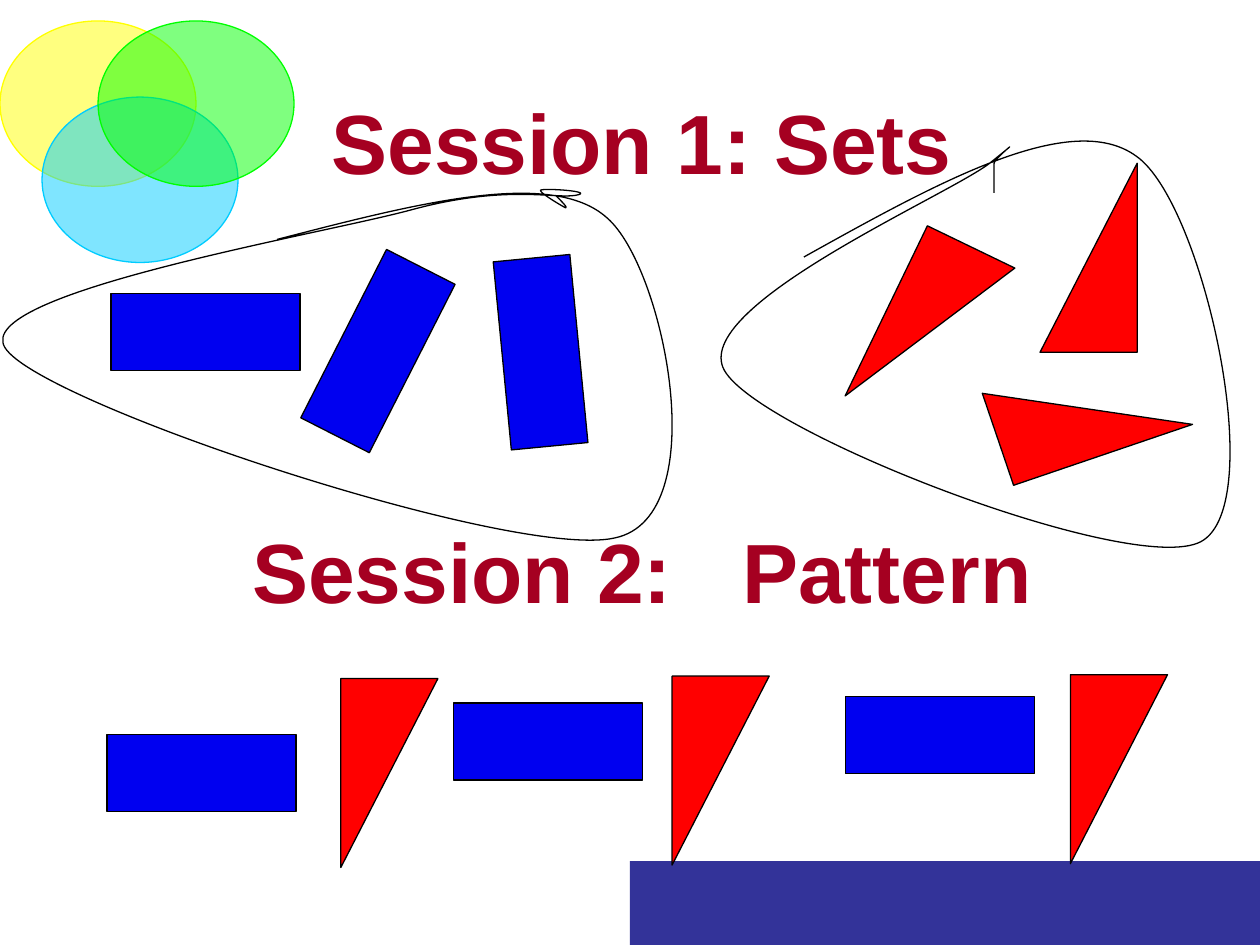
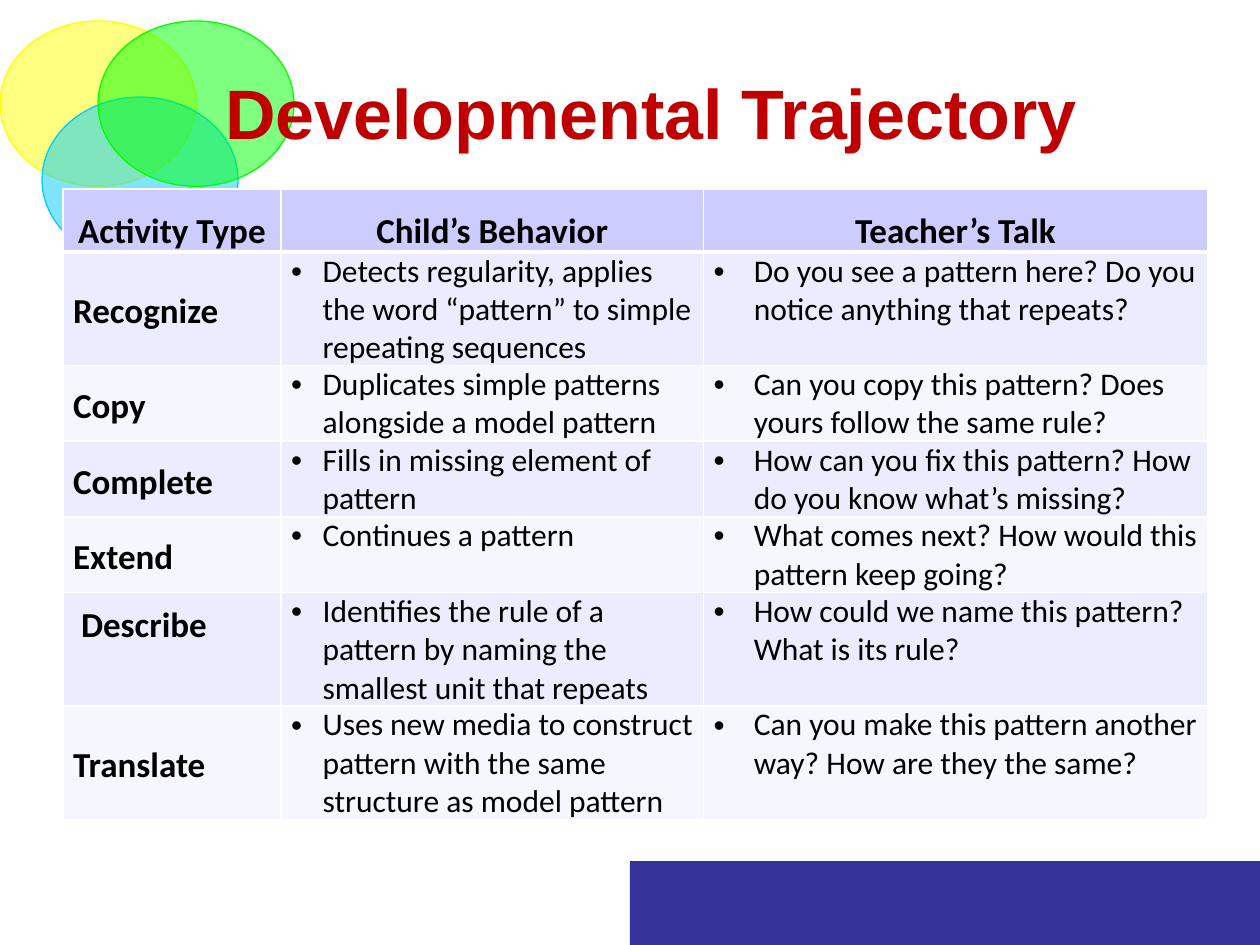
import pptx
import pptx.dml.color
import pptx.enum.shapes
import pptx.enum.text
import pptx.oxml
import pptx.oxml.ns
import pptx.util

Pt = pptx.util.Pt
SHAPE = pptx.enum.shapes.MSO_SHAPE
ALIGN = pptx.enum.text.PP_ALIGN
ANCHOR = pptx.enum.text.MSO_ANCHOR
NS = pptx.oxml.ns.nsdecls("a")
qn = pptx.oxml.ns.qn

HUES = {
    "black": "000000", "white": "FFFFFF", "band": "333399",
    "yellow": "FFFF00", "cyan": "00CCFF", "green": "00FF00",
    "crimson": "A50021", "red": "C00000",
    "block": "0000F0", "wedge": "FF0000",
    "head": "CCCCFF", "odd": "ECECFF", "even": "F6F6FF",
}

BIG = {"name": "Arial", "size": Pt(48), "bold": True}
TITLE = {**BIG, "size": Pt(40)}
LABEL = {"name": "Calibri", "size": Pt(20), "bold": True}
BODY = {**LABEL, "size": Pt(18), "bold": False}
INSET = {"margin_left": Pt(5.8), "margin_right": Pt(5.8),
         "margin_top": 0, "margin_bottom": 0}

# Left, top, turn in degrees
BLOCKS = [(254.9, 179.3, 84.5), (259.2, 401.8, 0), (483.1, 398.2, 0),
          (63.4, 167.8, 0), (162, 178.6, 297), (61.2, 419.8, 0)]
WEDGES = [(168.5, 414, 90), (567.4, 205.9, 341.2), (568.1, 119.5, 270),
          (477.4, 162, 115.8), (357.8, 412.6, 90), (585.4, 411.8, 90)]

# Start point, then two handles and an end point for each curve
BLOCK_BOX = (1.4, 108.7, 383, 200.9)
BLOCK_LOOP = [
    (158.4, 136.8),
    (236.9, 116.6), (315.4, 95.8), (347, 124.6),
    (379.4, 152.6), (409, 295.2), (351.4, 307.4),
    (293.8, 320.4), (22.3, 230.4), (2.9, 198.7),
    (-16.6, 167.8), (180, 134.6), (234, 120.2),
    (288.7, 105.1), (316.8, 113.8), (329, 111.6),
    (341.3, 109.4), (310.3, 107.3), (308.9, 108.7),
    (308.2, 110.2), (321.8, 118.1), (323.3, 118.8),
    (324.7, 118.8), (321.1, 115.2), (317.5, 111.6),
]
WEDGE_BOX = (411.8, 80.6, 290.9, 231.8)
WEDGE_LOOP = [
    (459.4, 146.9),
    (535.7, 104.4), (612, 61.9), (649.4, 89.3),
    (687.6, 115.9), (725.8, 288.7), (686.2, 309.6),
    (647.3, 329.8), (434.2, 247.7), (414, 211.7),
    (393.8, 175.7), (539.3, 113), (565.2, 93.6),
    (590.4, 73.4), (567.4, 90.7), (568.1, 93.6),
    (568.1, 95.8), (568.1, 103), (568.1, 110.2),
]

HEADS = ["Activity Type", "Child’s Behavior", "Teacher’s Talk"]
STAGES = [
    ("Recognize",
     "Detects regularity, applies the word “pattern” to simple repeating sequences",
     "Do you see a pattern here? Do you notice anything that repeats?"),
    ("Copy",
     "Duplicates simple patterns alongside a model pattern",
     "Can you copy this pattern? Does yours follow the same rule?"),
    ("Complete",
     "Fills in missing element of pattern",
     "How can you fix this pattern? How do you know what’s missing?"),
    ("Extend",
     "Continues a pattern",
     "What comes next? How would this pattern keep going?"),
    ("Describe",
     "Identifies the rule of a pattern by naming the smallest unit that repeats",
     "How could we name this pattern? What is its rule?"),
    ("Translate",
     "Uses new media to construct pattern with the same structure as model pattern",
     "Can you make this pattern another way? How are they the same?"),
]
COLS = [124.6, 241.4, 288]
ROWS = [36, 64.8, 43.2, 43.2, 43.2, 64.8, 64.8]


def put(item, vals):
    for key, val in vals.items():
        setattr(item, key, val)


def hue(name):
    return pptx.dml.color.RGBColor.from_string(HUES[name])


def paint(shape, fill, line):
    """Set fill and thin outline; None means there is none."""
    shape.shadow.inherit = False
    for part, name in ((shape.fill, fill), (shape.line.fill, line)):
        if name:
            part.solid()
            part.fore_color.rgb = hue(name)
        else:
            part.background()
    if line:
        shape.line.width = Pt(0.75)


def draw(shapes, kind, box, fill, line=None, turn=0):
    shape = shapes.add_shape(kind, *map(Pt, box))
    paint(shape, fill, line)
    shape.rotation = turn
    return shape


def fade(shape):
    """Make the fill half transparent."""
    tint = shape.fill._xPr.find(".//" + qn("a:srgbClr"))
    tint.append(pptx.oxml.parse_xml(f'<a:alpha {NS} val="50000"/>'))


def trace(slide, knots, box):
    """Draw an open outline of cubic curves that spans the box."""
    pen = slide.shapes.build_freeform(*map(Pt, knots[0]))
    pen.add_line_segments([tuple(map(Pt, knot)) for knot in knots[3::3]], close=False)
    shape = pen.convert_to_shape()
    paint(shape, None, "black")
    left, top, width, height = map(Pt, box)
    put(shape, {"left": left, "top": top, "width": width, "height": height})
    route = shape._element.find(".//" + qn("a:path"))
    for child in list(route):
        route.remove(child)
    route.set("w", str(width))
    route.set("h", str(height))
    dots = [f'<a:pt x="{Pt(x) - left}" y="{Pt(y) - top}"/>' for x, y in knots]
    steps = [("moveTo", dots[:1])]
    steps += [("cubicBezTo", dots[i:i + 3]) for i in range(1, len(dots), 3)]
    for tag, part in steps:
        route.append(pptx.oxml.parse_xml(f'<a:{tag} {NS}>{"".join(part)}</a:{tag}>'))


def write(para, text, font, tone):
    run = para.add_run()
    run.text = text
    put(run.font, font)
    run.font.color.rgb = hue(tone)
    return run


def frame(slide, box):
    """Add a wrapping text box for titles and return its text frame."""
    text = slide.shapes.add_textbox(*map(Pt, box)).text_frame
    text.word_wrap = True
    text.paragraphs[0].alignment = ALIGN.CENTER
    return text


def brand(deck, slide):
    """Draw the band and circles, then hand them to the slide master."""
    band = draw(slide.shapes, SHAPE.RECTANGLE, (360, 492, 360, 48), "band")
    rings = slide.shapes.add_group_shape()
    for left, top, name in ((0, 12, "yellow"), (24, 55.5, "cyan"), (56, 12, "green")):
        fade(draw(rings.shapes, SHAPE.OVAL, (left, top, 112, 94.5), name, name))
    for item in (band, rings):
        deck.slide_master.shapes._spTree.append(item._element)


def edge(cell, side, width):
    cell._tc.get_or_add_tcPr().append(pptx.oxml.parse_xml(
        f'<a:{side} {NS} w="{Pt(width)}"><a:solidFill>'
        f'<a:srgbClr val="{HUES["white"]}"/></a:solidFill></a:{side}>'))


def bullet(para, indent):
    props = para._p.get_or_add_pPr()
    props.set("marL", str(Pt(indent)))
    props.set("indent", str(-Pt(indent)))
    props.append(pptx.oxml.parse_xml(f'<a:buFont {NS} typeface="Arial"/>'))
    props.append(pptx.oxml.parse_xml(f'<a:buChar {NS} char="•"/>'))


def fill_cell(cell, text, row, col):
    put(cell, INSET)
    for side in ("lnL", "lnR", "lnT", "lnB"):
        thick = (row, side) in ((0, "lnB"), (1, "lnT"))
        edge(cell, side, 3 if thick else 1)
    cell.fill.solid()
    cell.fill.fore_color.rgb = hue("head" if row == 0 else "odd" if row % 2 else "even")
    para = cell.text_frame.paragraphs[0]
    if row == 0:
        put(para, {"alignment": ALIGN.CENTER, "line_spacing": 1.5})
    elif col == 0:
        para.line_spacing = 1.15
    else:
        bullet(para, 18 if col == 1 else 23)
    label = row == 0 or col == 0
    cell.vertical_anchor = ANCHOR.MIDDLE if label else ANCHOR.TOP
    write(para, text, LABEL if label else BODY, "black")


def add_grid(slide):
    data = [HEADS, *STAGES]
    grid = slide.shapes.add_table(
        len(ROWS), len(COLS), Pt(36), Pt(108), Pt(sum(COLS)), Pt(sum(ROWS))).table
    grid.horz_banding = False
    for col, width in zip(grid.columns, COLS):
        col.width = Pt(width)
    for row, height in zip(grid.rows, ROWS):
        row.height = Pt(height)
    for r, texts in enumerate(data):
        for c, text in enumerate(texts):
            fill_cell(grid.cell(r, c), text, r, c)
    # This label sits higher and further in than the others
    put(grid.cell(5, 0), {"margin_left": Pt(10.3), "margin_bottom": Pt(30.5)})


def sets(slide):
    text = frame(slide, (51.8, 48.2, 630, 370.8))
    write(text.paragraphs[0], "Session 1: Sets", BIG, "crimson")
    para = text.add_paragraph()
    put(para, {"alignment": ALIGN.CENTER, "space_before": Pt(187.6)})
    write(para, "Session 2:", BIG, "crimson")
    gap = write(para, " ", BIG, "crimson")
    gap._r.get_or_add_rPr().set("spc", "2667")
    write(para, "Pattern", BIG, "crimson")
    for left, top, turn in BLOCKS:
        draw(slide.shapes, SHAPE.RECTANGLE, (left, top, 108, 44), "block", "black", turn)
    for left, top, turn in WEDGES:
        draw(slide.shapes, SHAPE.RIGHT_TRIANGLE, (left, top, 108, 55.5),
             "wedge", "black", turn)
    trace(slide, BLOCK_LOOP, BLOCK_BOX)
    trace(slide, WEDGE_LOOP, WEDGE_BOX)


def stages(slide):
    text = frame(slide, (59.8, 36, 624.2, 55.5))
    write(text.paragraphs[0], "Developmental Trajectory", TITLE, "red")
    add_grid(slide)


def main():
    deck = pptx.Presentation()
    put(deck, {"slide_width": Pt(720), "slide_height": Pt(540)})
    blank = deck.slide_layouts[6]
    first, second = (deck.slides.add_slide(blank) for _ in range(2))
    brand(deck, first)
    sets(first)
    stages(second)
    deck.save("out.pptx")


if __name__ == "__main__":
    main()
